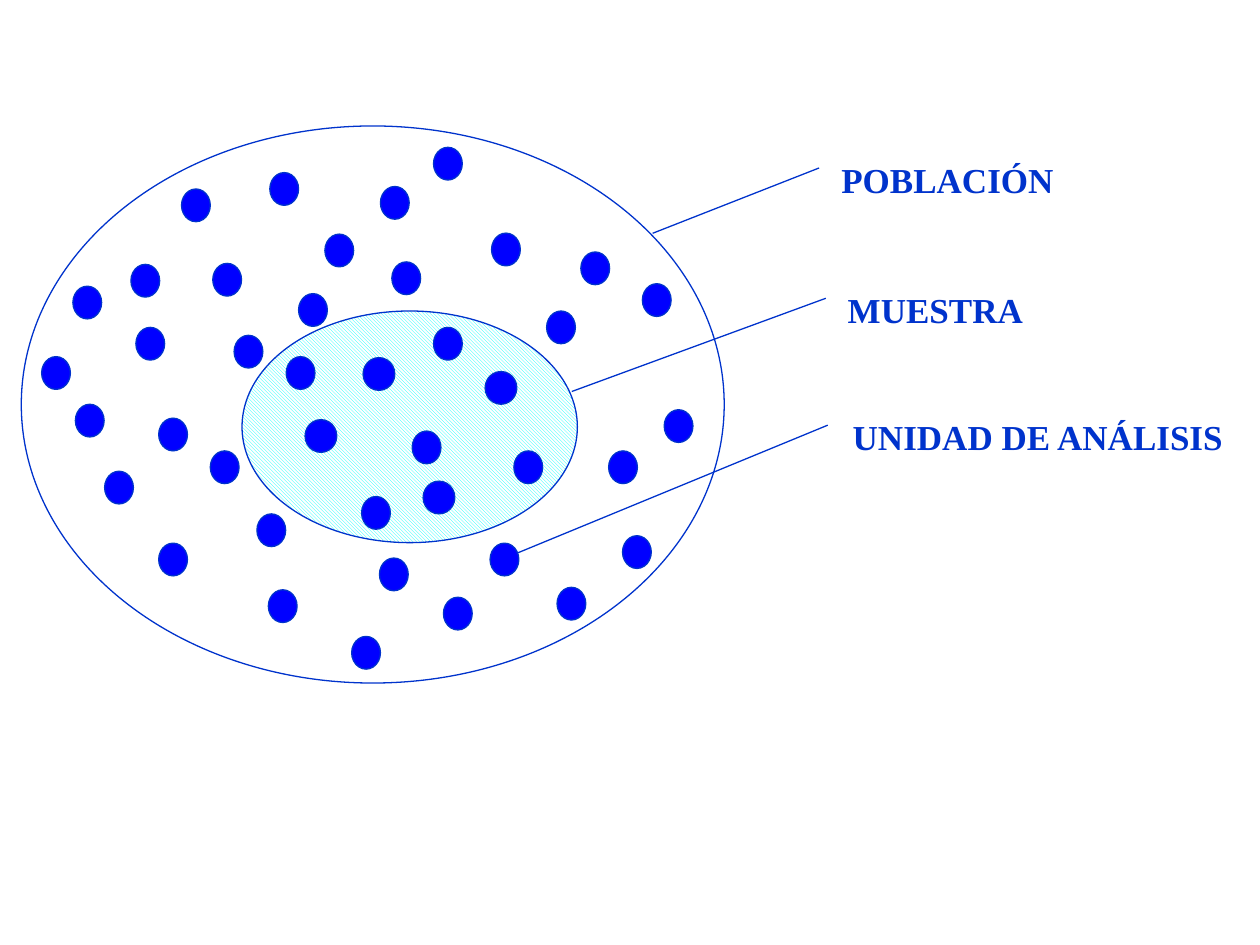
from pptx import Presentation
from pptx.dml.color import RGBColor
from pptx.enum.dml import MSO_PATTERN
from pptx.enum.shapes import MSO_SHAPE
from pptx.enum.text import MSO_ANCHOR, PP_ALIGN
from pptx.util import Cm, Pt

BLUE = "0033CC"


def rgb(value):
    return RGBColor.from_string(value)


def add_outlined(kind, left, top, width, height):
    """Add a shape with the thin blue outline and no shadow."""
    sp = s.shapes.add_shape(kind, Cm(left), Cm(top), Cm(width), Cm(height))
    sp.shadow.inherit = False
    sp.line.color.rgb = rgb(BLUE)
    sp.line.width = Pt(0.75)
    return sp


prs = Presentation()
prs.slide_width, prs.slide_height = Cm(25.4), Cm(19.05)
s = prs.slides.add_slide(prs.slide_layouts[6])

# Population and the sample inside it
population = add_outlined(MSO_SHAPE.OVAL, 0.43, 2.54, 14.17, 11.23)
population.fill.solid()
population.fill.fore_color.rgb = rgb("FFFFFF")

sample = add_outlined(MSO_SHAPE.OVAL, 4.88, 6.27, 6.76, 4.67)
sample.fill.patterned()
sample.fill.pattern = MSO_PATTERN.LIGHT_DOWNWARD_DIAGONAL
sample.fill.fore_color.rgb = rgb("00FFFF")
sample.fill.back_color.rgb = rgb("FFFFFF")

# Units of analysis: (left, top) of each dot, grouped by dot width
units = {
    0.58: [
        (1.52, 8.15), (7.67, 3.76), (3.2, 10.95), (3.2, 8.43), (5.41, 11.89),
        (4.29, 5.31), (5.44, 3.48), (2.64, 5.33), (6.55, 4.72), (9.88, 10.95),
        (11.02, 6.27), (9.91, 4.7), (7.65, 11.25), (12.27, 9.09), (7.09, 12.83),
        (11.23, 11.84), (13.39, 8.26), (12.95, 5.72), (10.36, 9.09), (3.66, 3.81),
        (2.11, 9.5), (2.74, 6.6), (4.72, 6.76), (4.24, 9.09), (5.18, 10.36),
        (1.47, 5.77), (8.74, 2.97), (8.74, 6.6), (11.71, 5.08), (8.94, 12.04),
        (0.84, 7.19), (5.77, 7.19), (6.02, 5.92), (8.31, 8.69), (12.55, 10.8),
        (7.29, 10.01), (7.9, 5.28),
    ],
    0.64: [(9.78, 7.49), (7.32, 7.21), (6.15, 8.46), (8.53, 9.7)],
}
for width, places in units.items():
    for left, top in places:
        dot = add_outlined(MSO_SHAPE.FLOWCHART_CONNECTOR, left, top, width, 0.66)
        dot.fill.solid()
        dot.fill.fore_color.rgb = rgb("0000FF")

# Callouts: text, box, leader line as y1, x1, y2, x2 in fractions of the box
callouts = [
    ("POBLACIÓN", (16.71, 3.07, 6.58, 2.44), (0.13, -0.03, 0.67, -0.54)),
    ("MUESTRA", (16.84, 5.69, 6.4, 2.16), (0.15, -0.03, 1.02, -0.83)),
    ("UNIDAD DE ANÁLISIS", (16.94, 8.26, 8.46, 2.08), (0.15, -0.03, 1.39, -0.77)),
]
for text, box, leader in callouts:
    sp = add_outlined(MSO_SHAPE.LINE_CALLOUT_1_NO_BORDER, *box)
    sp.fill.background()
    for i, value in enumerate(leader):
        sp.adjustments[i] = value
    tf = sp.text_frame
    tf.text = text
    tf.word_wrap = True
    tf.vertical_anchor = MSO_ANCHOR.TOP
    p = tf.paragraphs[0]
    p.alignment = PP_ALIGN.LEFT
    font = p.runs[0].font
    font.name, font.size, font.bold = "Times New Roman", Pt(20), True
    font.color.rgb = rgb(BLUE)

prs.save("out.pptx")
